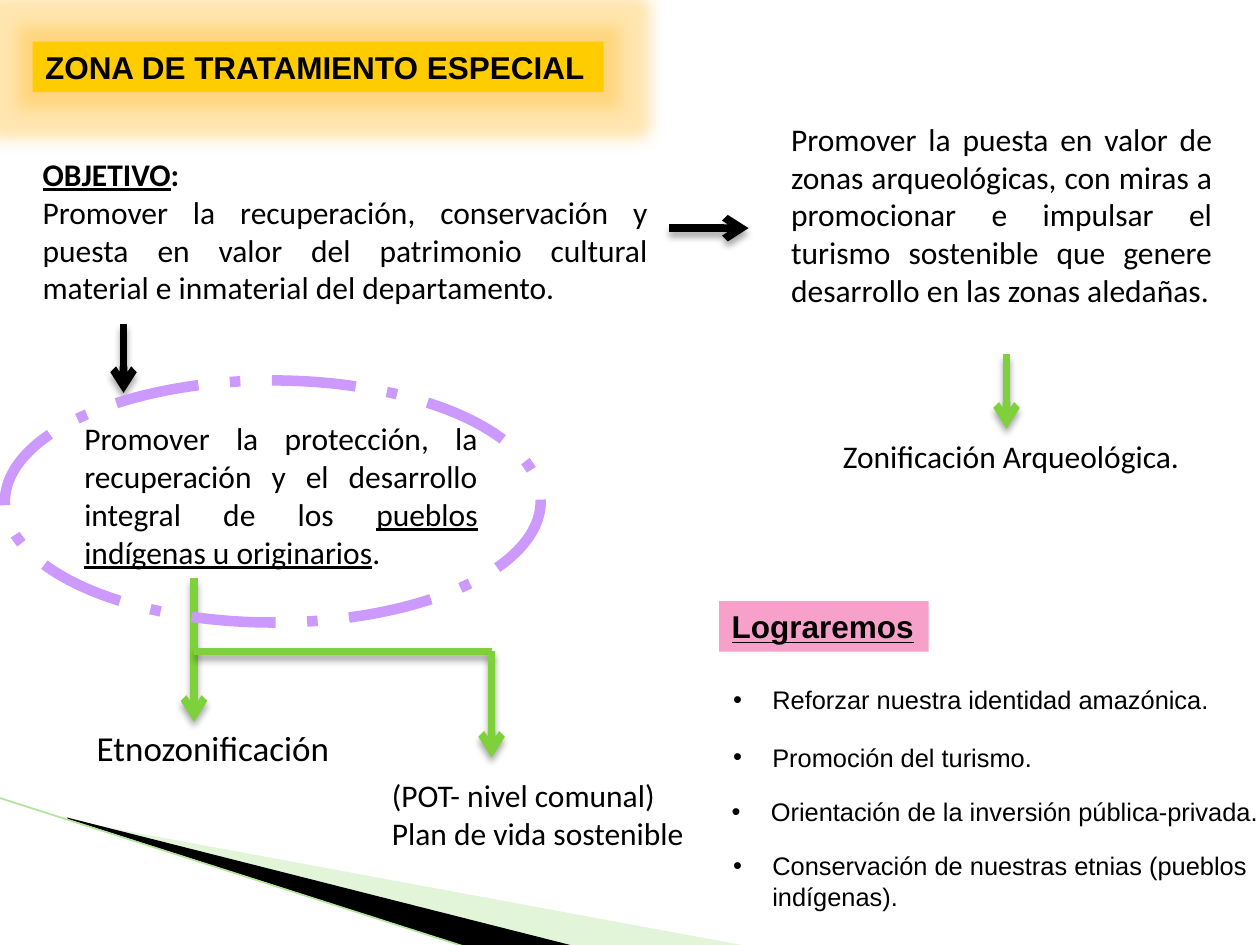
from dataclasses import dataclass
from typing import Optional

from lxml.etree import SubElement
from pptx import Presentation
from pptx.dml.color import RGBColor
from pptx.enum.dml import MSO_LINE
from pptx.enum.shapes import MSO_CONNECTOR, MSO_SHAPE
from pptx.enum.text import MSO_ANCHOR, MSO_AUTO_SIZE, PP_ALIGN
from pptx.oxml import parse_xml
from pptx.oxml.ns import nsdecls, qn
from pptx.util import Cm, Pt

BLACK = RGBColor(0x00, 0x00, 0x00)
GREEN = RGBColor(0x7F, 0xD1, 0x3B)
PALE_GREEN = RGBColor(0xB8, 0xE7, 0xA1)
EDGE_GREEN = RGBColor(0xB1, 0xE3, 0x99)
YELLOW = RGBColor(0xFF, 0xCC, 0x00)
PINK = RGBColor(0xF7, 0xA1, 0xCA)
LILAC = RGBColor(0xCC, 0x99, 0xFF)
GLOW = RGBColor(0xFF, 0xBF, 0x36)


@dataclass
class Run:
    text: str
    bold: Optional[bool] = None
    underline: Optional[bool] = None


@dataclass
class Label:
    left: float
    top: float
    width: float
    height: float
    paragraphs: list[list[Run]]
    size: float = 18
    font: str = "Calibri"
    align: PP_ALIGN = PP_ALIGN.LEFT
    wrap: bool = True
    bullet: bool = False
    fill: Optional[RGBColor] = None


@dataclass
class Line:
    x1: float
    y1: float
    x2: float
    y2: float
    color: RGBColor
    arrow: bool = True
    width: float = 4.33
    shadow: bool = True


@dataclass
class Wedge:
    points: list[tuple[float, float]]
    color: RGBColor
    opacity: int = 100


OBJECTIVE = Label(0.61, 3, 12.7, 3.33, [
    [Run("OBJETIVO", True, True), Run(": ", True)],
    [Run("Promover la recuperación, conservación y puesta en valor del patrimonio "
         "cultural material e inmaterial del departamento.")],
], align=PP_ALIGN.JUSTIFY)
PEOPLES = Label(1.45, 8.33, 8.43, 3.33, [[
    Run("Promover la protección, la recuperación y el desarrollo integral de los "),
    Run("pueblos indígenas u originarios", underline=True), Run("."),
]], align=PP_ALIGN.JUSTIFY)
ARCHAEOLOGY = Label(15.7, 2.29, 8.99, 4.88, [[
    Run("Promover la puesta en valor de zonas arqueológicas, con miras a promocionar "
        "e impulsar el turismo sostenible que genere desarrollo en las zonas aledañas."),
]], align=PP_ALIGN.JUSTIFY)
TITLE = Label(0.66, 0.84, 11.51, 1.02, [[Run("ZONA DE TRATAMIENTO ESPECIAL", True)]],
              font="Arial", wrap=False, fill=YELLOW)
ACHIEVEMENTS = Label(14.5, 12.12, 4.22, 1.02, [[Run("Lograremos", True, True)]],
                     font="Arial", wrap=False, fill=PINK)
GOALS = [
    Label(left, top, 11.51, height, [[Run(text)]], 14.5, "Arial", bullet=True)
    for left, top, height, text in (
        (14.53, 13.67, 0.89, "Reforzar nuestra identidad amazónica."),
        (14.53, 14.83, 0.89, "Promoción del turismo."),
        (14.5, 15.93, 0.89, "Orientación de la inversión pública-privada."),
        (14.53, 17.02, 1.5, "Conservación de nuestras etnias (pueblos indígenas)."),
    )
]
OUTCOMES = [
    Label(1.7, 14.53, 5.51, 1.12, [[Run("Etnozonificación")]], 20),
    Label(7.65, 15.52, 6.83, 1.8,
          [[Run("(POT- nivel comunal)")], [Run("Plan de vida sostenible")]]),
    Label(16.74, 8.69, 7.9, 1.02, [[Run("Zonificación Arqueológica.")]]),
]
FLOW = [
    Line(2.49, 6.53, 2.49, 7.92, BLACK),
    Line(13.49, 4.6, 15.09, 4.6, BLACK),
    Line(3.91, 11.66, 3.91, 14.55, GREEN),
    Line(3.91, 13.13, 9.91, 13.13, GREEN, arrow=False),
    Line(9.91, 13.13, 9.91, 15.27, GREEN),
    Line(20.29, 7.14, 20.29, 8.64, GREEN),
]
WEDGES = [
    Wedge([(1.4, 16.54), (15.11, 19.08), (11.58, 19.08), (1.4, 16.51)], PALE_GREEN, 40),
    Wedge([(1.35, 16.48), (11.61, 19.08), (9.45, 19.1), (1.37, 16.51)], BLACK),
]
EDGE = Line(-0.03, 16.08, 9.42, 19.1, EDGE_GREEN, False, 0.95, False)


def add_label(slide, label: Label):
    """Draw a text box, or a filled rectangle when the label has a fill."""
    box = Cm(label.left), Cm(label.top), Cm(label.width), Cm(label.height)
    if label.fill is None:
        shape = slide.shapes.add_textbox(*box)
    else:
        shape = slide.shapes.add_shape(MSO_SHAPE.RECTANGLE, *box)
        shape.shadow.inherit = False
        shape.fill.solid()
        shape.fill.fore_color.rgb = label.fill
        shape.line.fill.background()
    frame = shape.text_frame
    frame.word_wrap = label.wrap
    frame.auto_size = MSO_AUTO_SIZE.SHAPE_TO_FIT_TEXT
    frame.vertical_anchor = MSO_ANCHOR.TOP
    for index, runs in enumerate(label.paragraphs):
        paragraph = frame.add_paragraph() if index else frame.paragraphs[0]
        paragraph.alignment = label.align
        if label.bullet:
            properties = paragraph._p.get_or_add_pPr()
            properties.set("marL", str(Cm(0.79)))
            properties.set("indent", str(-Cm(0.79)))
            SubElement(properties, qn("a:buFont"), typeface="Arial")
            SubElement(properties, qn("a:buChar"), char="•")
        paragraph.font.name = label.font
        paragraph.font.size = Pt(label.size)
        paragraph.font.color.rgb = BLACK
        for item in runs:
            run = paragraph.add_run()
            run.text = item.text
            run.font.bold = item.bold
            run.font.underline = item.underline
    return shape


def add_glow(shape, color: RGBColor) -> None:
    """Surround a shape with a soft translucent halo."""
    effects = shape._element.spPr.find(qn("a:effectLst"))
    effects.append(parse_xml(
        f'<a:glow {nsdecls("a")} rad="{Pt(18)}"><a:srgbClr val="{color}">'
        '<a:alpha val="40000"/></a:srgbClr></a:glow>'))


def add_line(slide, line: Line) -> None:
    """Draw a straight line with an optional arrowhead and shadow."""
    connector = slide.shapes.add_connector(
        MSO_CONNECTOR.STRAIGHT, Cm(line.x1), Cm(line.y1), Cm(line.x2), Cm(line.y2))
    connector.line.color.rgb = line.color
    connector.line.width = Pt(line.width)
    if line.arrow:
        SubElement(connector.line._get_or_add_ln(), qn("a:tailEnd"), type="arrow")
    effects = SubElement(connector._element.spPr, qn("a:effectLst"))
    if line.shadow:
        effects.append(parse_xml(
            f'<a:outerShdw {nsdecls("a")} blurRad="{Pt(4)}" dist="{Pt(3)}" dir="5400000" '
            'rotWithShape="0"><a:srgbClr val="000000"><a:alpha val="35000"/></a:srgbClr>'
            '</a:outerShdw>'))


def add_wedge(slide, wedge: Wedge) -> None:
    """Draw a filled corner wedge."""
    start, *others = [(Cm(x), Cm(y)) for x, y in wedge.points]
    builder = slide.shapes.build_freeform(*start)
    builder.add_line_segments(others)
    shape = builder.convert_to_shape()
    shape.shadow.inherit = False
    shape.fill.solid()
    shape.fill.fore_color.rgb = wedge.color
    shape.line.fill.background()
    if wedge.opacity < 100:
        color = shape._element.spPr.find(qn("a:solidFill"))[0]
        SubElement(color, qn("a:alpha"), val=str(wedge.opacity * 1000))


def main() -> None:
    """Build the special treatment zone slide."""
    presentation = Presentation()
    presentation.slide_width, presentation.slide_height = Cm(25.4), Cm(19.05)
    slide = presentation.slides.add_slide(presentation.slide_layouts[6])
    for wedge in WEDGES:
        add_wedge(slide, wedge)
    add_line(slide, EDGE)
    add_glow(add_label(slide, TITLE), GLOW)
    for label in (OBJECTIVE, PEOPLES, ARCHAEOLOGY, ACHIEVEMENTS, *GOALS, *OUTCOMES):
        add_label(slide, label)
    for line in FLOW:
        add_line(slide, line)
    ring = slide.shapes.add_shape(MSO_SHAPE.OVAL, Cm(0.1), Cm(7.67), Cm(10.8), Cm(4.88))
    ring.shadow.inherit = False
    ring.fill.background()
    ring.line.color.rgb = LILAC
    ring.line.width = Pt(6)
    ring.line.dash_style = MSO_LINE.LONG_DASH_DOT
    presentation.save("out.pptx")


if __name__ == "__main__":
    main()
